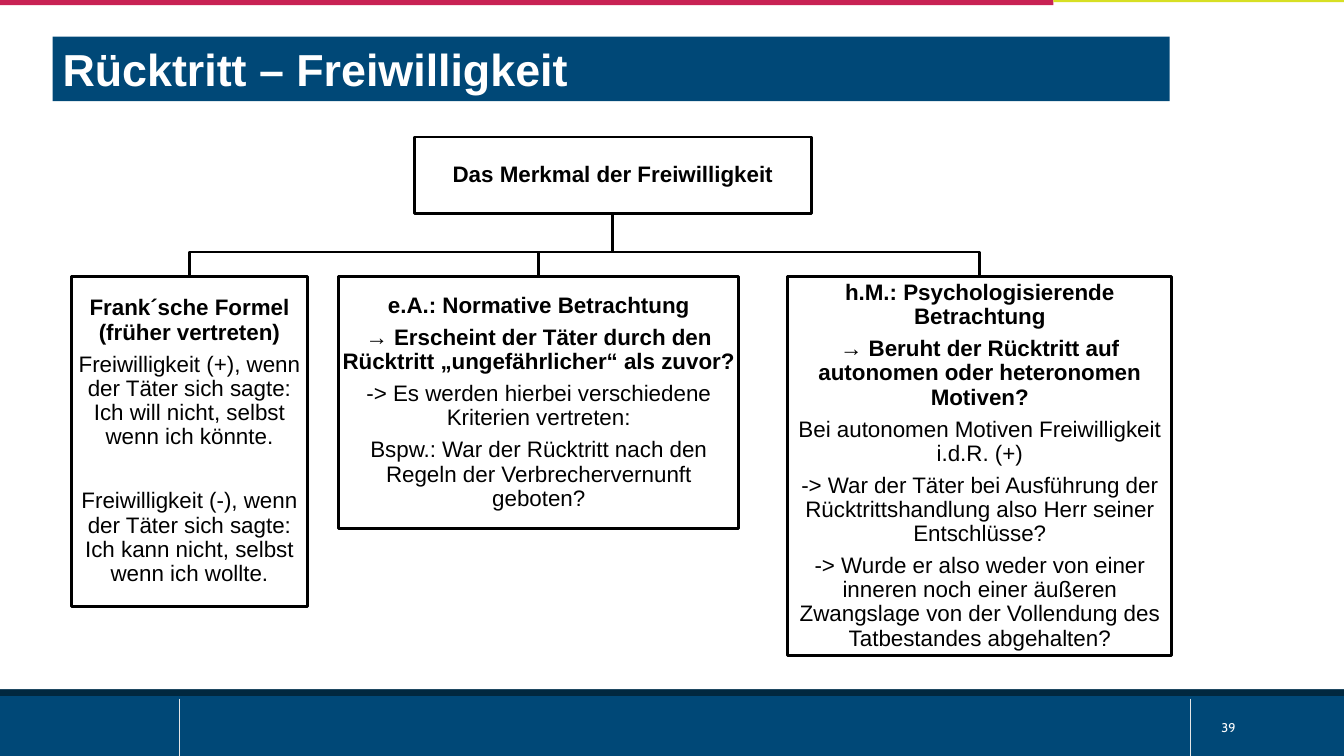
from lxml import etree
from pptx import Presentation
from pptx import util as u
from pptx.dml.color import RGBColor
from pptx.enum import shapes, text
from pptx.oxml.ns import qn

BLUE, NAVY, RED, LIME = "004877", "01283F", "C82254", "D7DF23"
GREY, WHITE, BLACK = "E6E6E6", "FFFFFF", "000000"


def color(value):
    return RGBColor.from_string(value)


def apply(target, values):
    for name, value in values.items():
        setattr(target, name, value)


class Slide:
    """Style of the deck and the page being drawn."""

    line_width = u.Pt(2)
    branch_height = u.Pt(180)
    title = {"name": "Arial", "size": u.Pt(32), "bold": True}
    body = {"name": "Arial", "size": u.Pt(16)}
    number = {"name": "Cabin", "size": u.Pt(9)}
    inset = dict.fromkeys(
        ("margin_left", "margin_top", "margin_right", "margin_bottom"), u.Pt(0.72))
    body_para = {"alignment": text.PP_ALIGN.CENTER, "line_spacing": 0.9,
                 "space_after": u.Pt(5.6)}

    def __init__(self, page):
        self.page = page

    def bar(self, at, fill):
        box = self.page.shapes.add_shape(
            shapes.MSO_SHAPE.RECTANGLE, *map(u.Pt, at))
        box.shadow.inherit = False
        box.fill.solid()
        box.fill.fore_color.rgb = color(fill)
        box.line.fill.background()
        return box

    def divider(self, x, top, bottom):
        line = self.page.shapes.add_connector(
            shapes.MSO_CONNECTOR.STRAIGHT, *map(u.Pt, (x, top, x, bottom)))
        line.line.color.rgb = color(GREY)
        line.line.width = u.Pt(0.5)
        etree.SubElement(line._element.spPr, qn("a:effectLst"))

    def add_span(self, para, words, font, fill):
        span = para.add_run()
        span.text = words
        apply(span.font, font)
        span.font.color.rgb = color(fill)

    def heading(self, at, words):
        box = self.bar(at, BLUE)
        apply(box.text_frame, {"word_wrap": True,
                               "vertical_anchor": text.MSO_ANCHOR.TOP})
        para = box.text_frame.paragraphs[0]
        para.alignment = text.PP_ALIGN.LEFT
        self.add_span(para, words, self.title, WHITE)

    def page_number(self, at, words):
        box = self.page.shapes.add_textbox(*map(u.Pt, at))
        apply(box.text_frame, {"word_wrap": True,
                               "vertical_anchor": text.MSO_ANCHOR.MIDDLE})
        self.add_span(box.text_frame.paragraphs[0], words, self.number, WHITE)

    def node(self, at, paragraphs):
        """Outlined box; each paragraph is (words, bold, space before)."""
        box = self.bar(at, WHITE)
        box.line.color.rgb = color(BLACK)
        box.line.width = self.line_width
        frame = box.text_frame
        apply(frame, {"word_wrap": True, **self.inset,
                      "vertical_anchor": text.MSO_ANCHOR.MIDDLE})
        for index, (words, bold, before) in enumerate(paragraphs):
            para = frame.add_paragraph() if index else frame.paragraphs[0]
            apply(para, self.body_para)
            if before:
                para.space_before = u.Pt(before)
            self.add_span(para, words, {**self.body, "bold": bold}, BLACK)
        return box

    def branch(self, parent, child):
        """Angled line from the bottom of the parent to the top of the child."""
        start = parent.left + parent.width // 2
        end = child.left + child.width // 2
        builder = self.page.shapes.build_freeform(
            start, parent.top + parent.height)
        builder.add_line_segments(
            [(start, self.branch_height), (end, self.branch_height),
             (end, child.top)], close=False)
        line = builder.convert_to_shape()
        line.shadow.inherit = False
        line.fill.background()
        line.line.color.rgb = color(BLACK)
        line.line.width = self.line_width


CHILDREN = [
    ((51.1, 168.5, 235.4), [
        ("Frank´sche Formel (früher vertreten)", True, 0),
        ("Freiwilligkeit (+), wenn der Täter sich sagte: Ich will nicht, "
         "selbst wenn ich könnte.", False, 0),
        ("Freiwilligkeit (-), wenn der Täter sich sagte: Ich kann nicht, "
         "selbst wenn ich wollte.", False, 23)]),
    ((241.9, 285.9, 180), [
        ("e.A.: Normative Betrachtung", True, 0),
        ("→ Erscheint der Täter durch den Rücktritt „ungefährlicher“ "
         "als zuvor?", True, 0),
        ("-> Es werden hierbei verschiedene Kriterien vertreten:", False, 0),
        ("Bspw.: War der Rücktritt nach den Regeln der Verbrechervernunft "
         "geboten?", False, 0)]),
    ((562.7, 274.3, 270.7), [
        ("h.M.: Psychologisierende Betrachtung", True, 0),
        ("→ Beruht der Rücktritt auf autonomen oder heteronomen Motiven?",
         True, 0),
        ("Bei autonomen Motiven Freiwilligkeit i.d.R. (+)", False, 0),
        ("-> War der Täter bei Ausführung der Rücktrittshandlung also Herr "
         "seiner Entschlüsse?", False, 0),
        ("-> Wurde er also weder von einer inneren noch einer äußeren "
         "Zwangslage von der Vollendung des Tatbestandes abgehalten?",
         False, 0)]),
]


def main():
    deck = Presentation()
    deck.slide_width, deck.slide_height = u.Pt(960), u.Pt(540)
    slide = Slide(deck.slides.add_slide(deck.slide_layouts[6]))

    # Footer and top stripes
    slide.bar((0, 492.5, 960, 47.5), BLUE)
    for x in (128.2, 850.3):
        slide.divider(x, 499, 540)
    slide.bar((0, 492.5, 960, 4.5), NAVY)
    slide.bar((0, 0, 752.4, 3.6), RED)
    slide.bar((752.4, 0, 207.6, 1.6), LIME)
    slide.page_number((865.4, 505.4, 94.3, 28.8), "39")

    # Title
    slide.heading((37.6, 26.2, 797.8, 46), "Rücktritt – Freiwilligkeit")

    # Tree
    root = slide.node((295.9, 97.9, 283.7, 54.7),
                      [("Das Merkmal der Freiwilligkeit", True, 0)])
    for (left, width, height), paragraphs in CHILDREN:
        child = slide.node((left, 197.6, width, height), paragraphs)
        slide.branch(root, child)

    deck.save("out.pptx")


if __name__ == "__main__":
    main()
